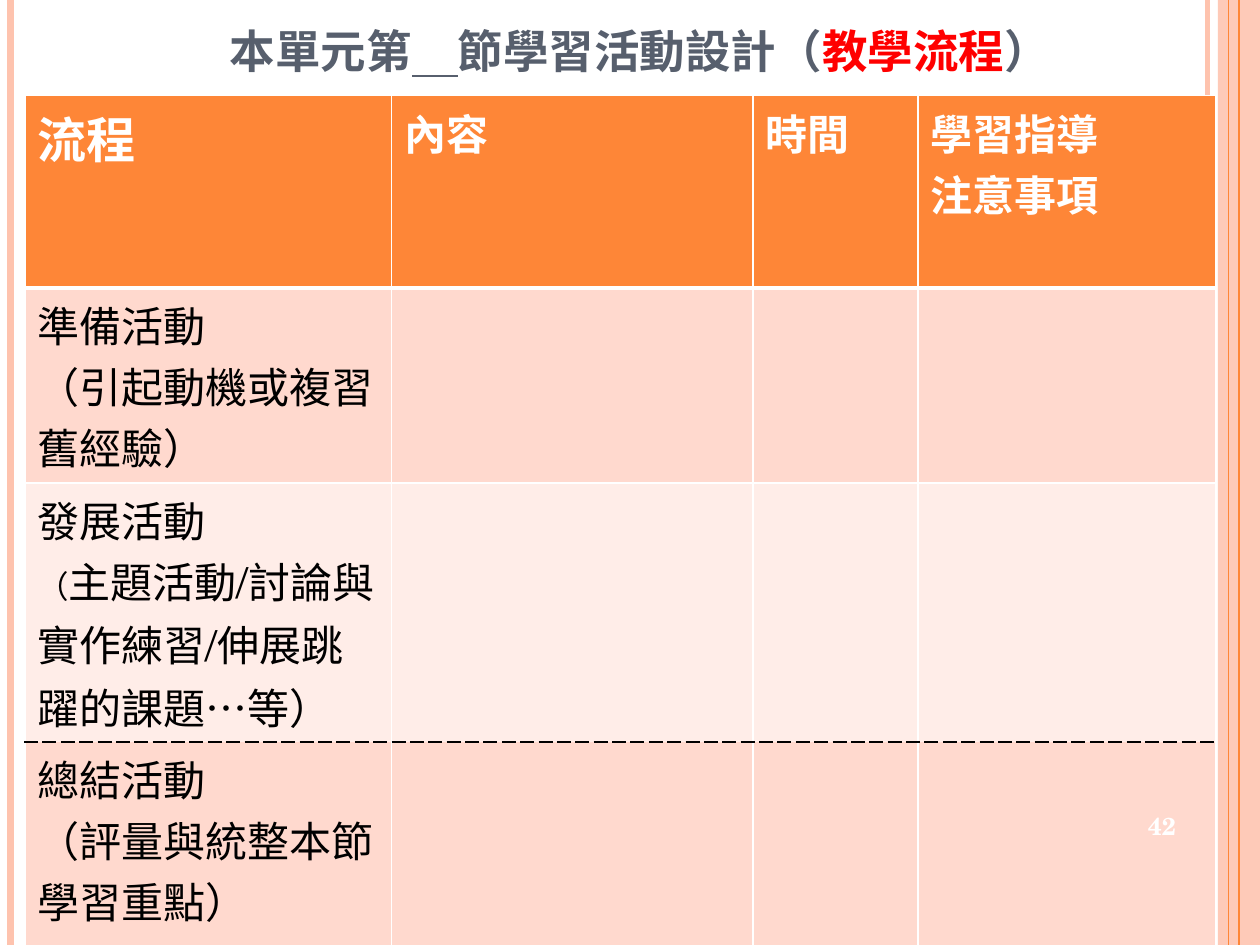
"""Build the lesson activity design slide with its teaching flow table."""
from lxml.etree import SubElement
from pptx import Presentation
from pptx.dml.color import RGBColor
from pptx.enum.shapes import MSO_CONNECTOR, MSO_SHAPE
from pptx.enum.text import MSO_ANCHOR, PP_ALIGN
from pptx.oxml.ns import qn
from pptx.util import Pt

ORANGE = RGBColor(0xFE, 0x86, 0x37)
PEACH = RGBColor(0xFE, 0xC3, 0xAE)
BAND_DARK = RGBColor(0xFF, 0xD9, 0xCE)
BAND_LIGHT = RGBColor(0xFF, 0xED, 0xE8)
SLATE = RGBColor(0x57, 0x5F, 0x6D)
RED = RGBColor(0xFF, 0, 0)
WHITE = RGBColor(0xFF, 0xFF, 0xFF)
BLACK = RGBColor(0, 0, 0)
SERIF, SANS, CJK = "TeX Gyre Schola", "Arial", "Noto Sans CJK TC"


def add_run(p, text, color, latin=SERIF, **fmt):
    r = p.add_run()
    r.text = text
    r.font.color.rgb = color
    for name, value in {"name": latin, **fmt}.items():
        setattr(r.font, name, value)
    SubElement(r.font._element, qn("a:ea"), typeface=CJK)


def set_border(cell, side, color, width, dash="solid"):
    ln = SubElement(cell._tc.get_or_add_tcPr(), qn(f"a:ln{side}"), w=str(Pt(width)))
    fill = SubElement(ln, qn("a:solidFill"))
    SubElement(fill, qn("a:srgbClr"), val=str(color))
    SubElement(ln, qn("a:prstDash"), val=dash)


prs = Presentation()
prs.slide_width, prs.slide_height = Pt(720), Pt(540)
s = prs.slides.add_slide(prs.slide_layouts[6])

band = s.shapes.add_shape(MSO_SHAPE.RECTANGLE, Pt(696), 0, Pt(24), Pt(540))
band.shadow.inherit = False
band.fill.solid()
band.fill.fore_color.rgb = PEACH
band.line.fill.background()
SubElement(band.fill._xPr.find(".//" + qn("a:srgbClr")), qn("a:alpha"), val="87000")

for x, color, width in [(690, PEACH, 3), (6, PEACH, 4.5), (708, ORANGE, 1.5), (702, ORANGE, 0.75)]:
    sp = s.shapes.add_connector(MSO_CONNECTOR.STRAIGHT, Pt(x), 0, Pt(x), Pt(540))
    sp.line.color.rgb = color
    sp.line.width = Pt(width)
    SubElement(sp._element.spPr, qn("a:effectLst"))

tf = s.shapes.add_textbox(Pt(42.5), Pt(5), Pt(646.5), Pt(48)).text_frame
tf.word_wrap = True
tf.vertical_anchor = MSO_ANCHOR.MIDDLE
p = tf.paragraphs[0]
p.alignment = PP_ALIGN.CENTER
for text, color, underline in [
    ("本單元第", SLATE, False),
    ("\u3000", SLATE, True),
    ("節學習活動設計（", SLATE, False),
    ("教學流程", RED, False),
    ("）", SLATE, False),
]:
    add_run(p, text, color, CJK, size=Pt(26), bold=True, underline=underline)

col_widths = [209.5, 206.5, 94.5, 170]
row_heights = [110, 111.5, 148, 123]
headers = [["流程"], ["內容"], ["時間"], ["學習指導", "注意事項"]]
stages = [
    ("準備活動", [("（引起動機或複習舊經驗）", 24)]),
    ("發展活動", [("（", 18), ("主題活動/討論與實作練習/伸展跳躍的課題…等）", 24)]),
    ("總結活動", [("（評量與統整本節學習重點）", 24)]),
]
fills = [ORANGE, BAND_DARK, BAND_LIGHT, BAND_DARK]
thin, thick, dashed = (WHITE, 1), (WHITE, 3), (BLACK, 1, "dash")
rules = [thin, thick, thin, dashed, thin]

tbl = s.shapes.add_table(4, 4, Pt(14.2), Pt(54.5), Pt(sum(col_widths)), Pt(sum(row_heights))).table
for col, width in zip(tbl.columns, col_widths):
    col.width = Pt(width)
for i, height in enumerate(row_heights):
    tbl.rows[i].height = Pt(height)
    for cell in tbl.rows[i].cells:
        for side, rule in zip("LRTB", [thin, thin, rules[i], rules[i + 1]]):
            set_border(cell, side, *rule)
        cell.fill.solid()
        cell.fill.fore_color.rgb = fills[i]

for j, lines in enumerate(headers):
    tf = tbl.cell(0, j).text_frame
    for k, text in enumerate(lines):
        p = tf.add_paragraph() if k else tf.paragraphs[0]
        add_run(p, text, WHITE, SANS, size=Pt(24 if j else 28), bold=True)

for i, (stage, details) in enumerate(stages, 1):
    tf = tbl.cell(i, 0).text_frame
    add_run(tf.paragraphs[0], stage, BLACK, SANS, size=Pt(24), bold=False)
    p = tf.add_paragraph()
    for text, size in details:
        add_run(p, text, BLACK, size=Pt(size), bold=False)

tf = s.shapes.add_textbox(Pt(642.5), Pt(450.5), Pt(43), Pt(43)).text_frame
tf.word_wrap = True
tf.vertical_anchor = MSO_ANCHOR.MIDDLE
tf.paragraphs[0].alignment = PP_ALIGN.CENTER
add_run(tf.paragraphs[0], "42", WHITE, size=Pt(14), bold=True)

prs.save("out.pptx")
